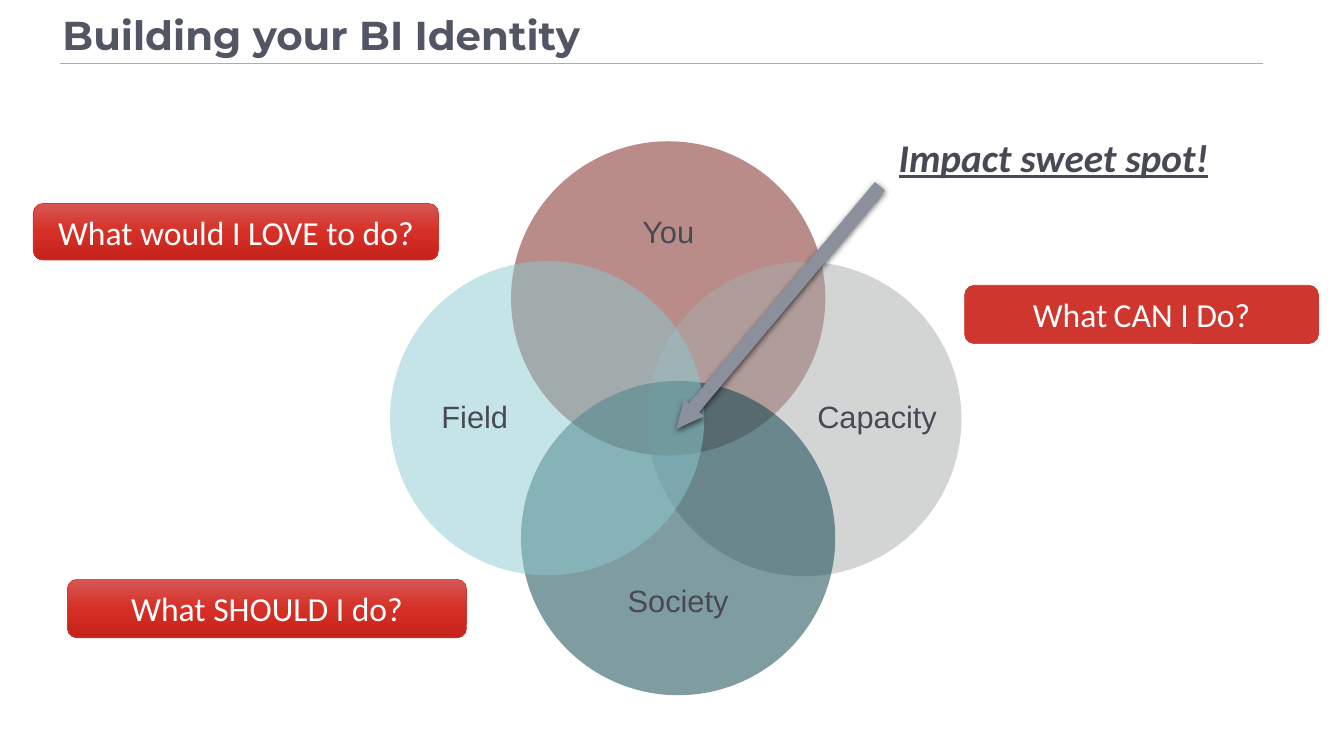
from copy import deepcopy
from lxml.etree import SubElement
from pptx import Presentation
from pptx.dml.color import RGBColor
from pptx.enum.shapes import MSO_CONNECTOR, MSO_SHAPE
from pptx.enum.text import MSO_ANCHOR, MSO_AUTO_SIZE, PP_ALIGN
from pptx.oxml.ns import qn
from pptx.util import Cm, Pt

SLATE = RGBColor(0x52, 0x56, 0x64)
INK = RGBColor(0x47, 0x4A, 0x54)
RULE = RGBColor(0xAA, 0xAC, 0xAD)
WHITE = RGBColor(0xFF, 0xFF, 0xFF)
BLACK = RGBColor(0, 0, 0)
MAROON = RGBColor(0x75, 0x1A, 0x15)
GREY = RGBColor(0xA9, 0xAC, 0xAD)
TEAL = RGBColor(0x00, 0x3A, 0x45)
AQUA = RGBColor(0x8B, 0xCA, 0xD0)
RED = RGBColor(0xCE, 0x36, 0x2E)
GLOSS = [
    (0, RGBColor(0xD6, 0x58, 0x54)),
    (0.5, RGBColor(0xD6, 0x2F, 0x26)),
    (1, RGBColor(0xC5, 0x23, 0x1B)),
]
ARROW = RGBColor(0x8C, 0x90, 0x9D)

TITLE_FONT = dict(name="Montserrat", size=Pt(28.8), bold=True)
LABEL_FONT = dict(name="Arial", size=Pt(22))
SPOT_FONT = dict(name="Calibri", size=Pt(28), bold=True, italic=True, underline=True)
CALLOUT_FONT = dict(name="Calibri", size=Pt(24))

DIAMETER = 7.92
TOP = (0.91, 1.07, 6.1, 2.51)
BOTTOM = (0.91, 4.34, 6.1, 2.51)
LEFT = (0.61, 0.91, 3.05, 6.1)
RIGHT = (4.27, 0.91, 3.05, 6.1)
CIRCLES = [
    ("You", 12.88, 3.56, MAROON, TOP),
    ("Capacity", 16.31, 6.6, GREY, RIGHT),
    ("Society", 13.13, 9.6, TEAL, BOTTOM),
    ("Field", 9.83, 6.58, AQUA, LEFT),
]
CALLOUTS = [
    ((0.84, 5.13, 10.21, 1.42), ["What would I LOVE to do?"], True),
    ((1.7, 14.6, 10.06, 1.47), ["What SHOULD I do?"], True),
    ((24.31, 7.19, 8.92, 1.47), ["What", " ", "CAN I Do?"], False),
]


def cm(box):
    return [Cm(v) for v in box]


def write(tf, runs, font, color, align=PP_ALIGN.CENTER):
    tf.word_wrap = True
    tf.vertical_anchor = MSO_ANCHOR.MIDDLE
    p = tf.paragraphs[0]
    p.alignment = align
    for text in runs:
        r = p.add_run()
        r.text = text
        for key, value in font.items():
            setattr(r.font, key, value)
        r.font.color.rgb = color
    return p


def add_alpha(parent, percent):
    color = next(parent.iter(qn("a:srgbClr")))
    SubElement(color, qn("a:alpha"), val=str(percent * 1000))


def add_title(s, box):
    title = s.shapes.title
    title.left, title.top, title.width, title.height = cm(box)
    p = write(title.text_frame, ["Building your BI Identity"], TITLE_FONT, SLATE, PP_ALIGN.LEFT)
    p.line_spacing = 0.9
    title.text_frame.auto_size = MSO_AUTO_SIZE.NONE
    x, y, w, h = box
    rule = s.shapes.add_connector(
        MSO_CONNECTOR.STRAIGHT, *cm((x + 0.2, y + 1.37, x + 30.51, y + 1.37)))
    rule.line.color.rgb = RULE
    rule.line.width = Pt(0.5)
    SubElement(rule.element.spPr, qn("a:effectLst"))


def add_circle(group, text, x, y, color, label):
    sp = group.shapes.add_shape(MSO_SHAPE.OVAL, *cm((x, y, DIAMETER, DIAMETER)))
    sp.shadow.inherit = False
    sp.fill.solid()
    sp.fill.fore_color.rgb = color
    add_alpha(sp.element.spPr, 50)
    sp.line.fill.background()
    dx, dy, w, h = label
    tf = group.shapes.add_textbox(*cm((x + dx, y + dy, w, h))).text_frame
    for side in ("left", "top", "right", "bottom"):
        setattr(tf, f"margin_{side}", 0)
    write(tf, [text], LABEL_FONT, INK).line_spacing = 0.9


def fill_gloss(sp):
    sp.fill.gradient()
    sp.fill.gradient_angle = 270
    stops = next(sp.element.spPr.iter(qn("a:gsLst")))
    stops.insert(1, deepcopy(stops[0]))
    for stop, (position, color) in zip(sp.fill.gradient_stops, GLOSS):
        stop.position = position
        stop.color.rgb = color


def add_callout(s, box, runs, glossy):
    sp = s.shapes.add_shape(MSO_SHAPE.ROUNDED_RECTANGLE, *cm(box))
    sp.shadow.inherit = False
    if glossy:
        fill_gloss(sp)
    else:
        sp.fill.solid()
        sp.fill.fore_color.rgb = RED
    sp.line.color.rgb = RED
    sp.line.width = Pt(0.5)
    p = write(sp.text_frame, runs, CALLOUT_FONT, WHITE)
    for r in p.runs:
        if r.text == " ":
            r.font.size = Pt(20)


def add_sweet_spot(s, box):
    x, y, w, h = box
    tf = s.shapes.add_textbox(*cm(box)).text_frame
    write(tf, ["Impact sweet spot!"], SPOT_FONT, INK)
    tf.auto_size = MSO_AUTO_SIZE.SHAPE_TO_FIT_TEXT


def add_arrow(s, box):
    sp = s.shapes.add_shape(MSO_SHAPE.RIGHT_ARROW, *cm(box))
    sp.rotation = 130
    sp.adjustments[0] = 0.5
    sp.adjustments[1] = 1.05
    sp.fill.solid()
    sp.fill.fore_color.rgb = ARROW
    sp.line.fill.background()
    sp.shadow.inherit = False
    effects = sp.element.spPr.find(qn("a:effectLst"))
    shadow = SubElement(effects, qn("a:outerShdw"), blurRad=str(Pt(4.5)),
                        dist=str(Pt(1.5)), dir="5400000", rotWithShape="0")
    SubElement(shadow, qn("a:srgbClr"), val=str(BLACK))
    add_alpha(shadow, 63)


def main():
    prs = Presentation()
    prs.slide_width, prs.slide_height = Cm(33.87), Cm(19.05)
    s = prs.slides.add_slide(prs.slide_layouts[5])
    add_title(s, (1.32, 0.23, 30.02, 1.45))
    group = s.shapes.add_group_shape()
    for circle in CIRCLES:
        add_circle(group, *circle)
    add_sweet_spot(s, (21.79, 3.23, 9.52, 1.45))
    for callout in CALLOUTS:
        add_callout(s, *callout)
    add_arrow(s, (15.62, 7.42, 7.98, 0.66))
    prs.save("out.pptx")


if __name__ == "__main__":
    main()
